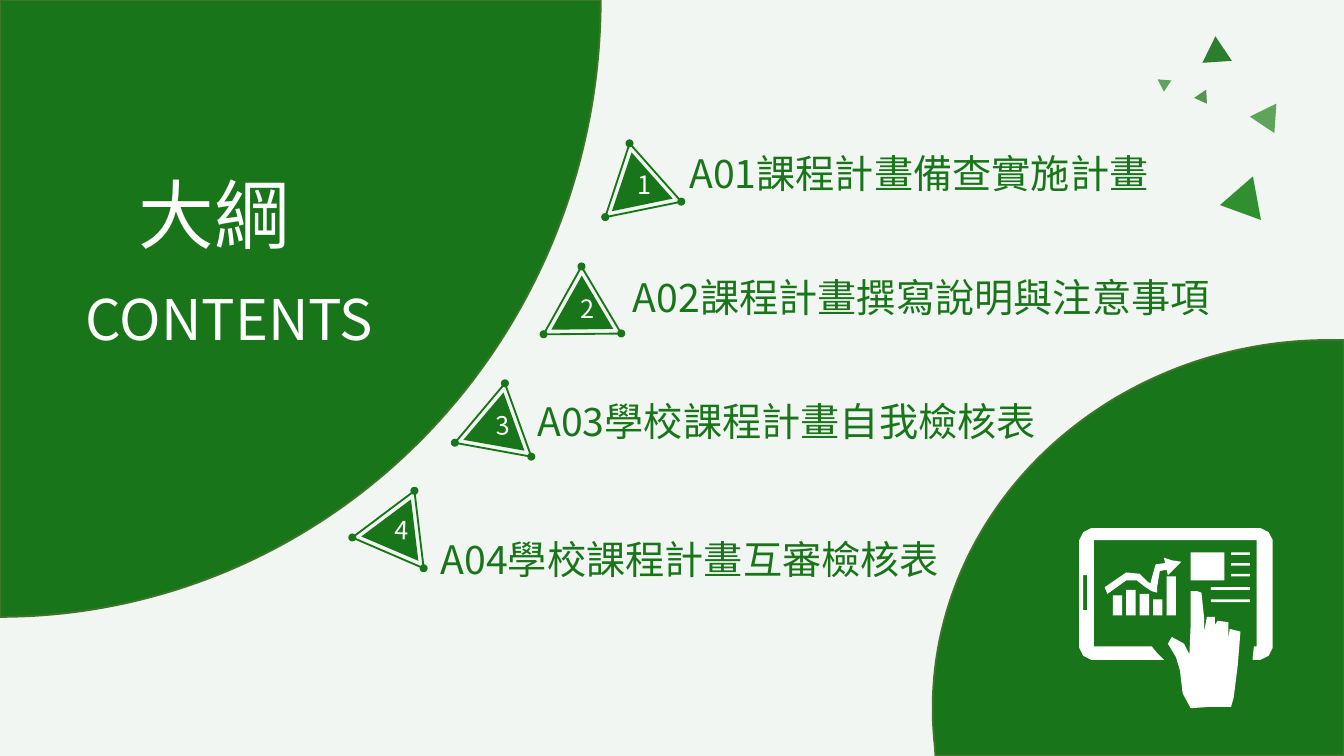
import math

import pptx
import pptx.dml.color
import pptx.enum.shapes
import pptx.enum.text
import pptx.util
from lxml import etree
from pptx.oxml.ns import qn

Inches = pptx.util.Inches
RGBColor = pptx.dml.color.RGBColor
MSO_SHAPE = pptx.enum.shapes.MSO_SHAPE
PP_ALIGN = pptx.enum.text.PP_ALIGN

GREEN = RGBColor(0x19, 0x75, 0x19)
EDGE_GREEN = RGBColor(0x3E, 0x75, 0x2A)
PALE_GREEN = RGBColor(0xF2, 0xF6, 0xF2)
WHITE = RGBColor(0xFF, 0xFF, 0xFF)
FONT = "Noto Sans CJK SC"


def style_shape(shape, fill=None, line=None):
    shape.shadow.inherit = False
    if fill is None:
        shape.fill.background()
    else:
        shape.fill.solid()
        shape.fill.fore_color.rgb = fill
    if line is None:
        shape.line.fill.background()
    else:
        shape.line.color.rgb = line
        shape.line.width = pptx.util.Pt(1)


def write_text(box, text, size, color, align, margin_left, wrap=True):
    frame = box.text_frame
    frame_format = {
        "word_wrap": wrap,
        "auto_size": pptx.enum.text.MSO_AUTO_SIZE.NONE,
        "vertical_anchor": pptx.enum.text.MSO_ANCHOR.MIDDLE,
        "margin_left": Inches(margin_left),
        "margin_top": 0, "margin_right": 0, "margin_bottom": 0,
    }
    for attribute, value in frame_format.items():
        setattr(frame, attribute, value)
    paragraph = frame.paragraphs[0]
    paragraph.alignment = align
    run = paragraph.add_run()
    run.text = text
    run.font.size = pptx.util.Pt(size)
    run.font.color.rgb = color
    run.font.name = FONT
    east_asian = etree.SubElement(run.font._element, qn("a:ea"))
    east_asian.set("typeface", FONT)


prs = pptx.Presentation()
prs.slide_width = Inches(10)
prs.slide_height = prs.slide_width * 9 // 16
slide = prs.slides.add_slide(prs.slide_layouts[5])
shapes = slide.shapes
slide.background.fill.solid()
slide.background.fill.fore_color.rgb = PALE_GREEN

# Scattered triangles: left, top, width, height, rotation, colour
confetti = [
    (9.33, 0.81, 0.22, 0.19, 153.9, "5EA45A"),
    (9.05, 1.36, 0.33, 0.28, 259.5, "309030"),
    (8.94, 0.27, 0.22, 0.19, 356.2, "2B7E2A"),
    (8.6, 0.57, 0.1, 0.09, 303.5, "5EA45A"),
    (8.9, 0.69, 0.11, 0.09, 145.8, "559551"),
]
for *place, rotation, color in confetti:
    triangle = shapes.add_shape(MSO_SHAPE.ISOSCELES_TRIANGLE, *map(Inches, place))
    triangle.rotation = rotation
    style_shape(triangle, RGBColor.from_string(color))

# Agenda: text, its left, top and width, then badge centre, rotation and digit tilt
agenda = [
    ("A01課程計畫備查實施計畫", 5.03, 1.06, 3.75, 4.69, 1.45, 228.4, 0),
    ("A02課程計畫撰寫說明與注意事項", 4.61, 1.98, 4.58, 4.26, 2.36, 239.3, 0),
    ("A03學校課程計畫自我檢核表", 3.9, 2.91, 4.03, 3.62, 3.21, 250.2, 356.4),
    ("A04學校課程計畫互審檢核表", 3.18, 3.93, 4.35, 2.87, 3.97, 263.2, 2.1),
]
RING_W, RING_H = 0.58, 0.5
CORE_W, CORE_H = 0.46, 0.4
DOT = 0.06
DIGIT_W, DIGIT_H = 0.19, 0.33
for number, (text, left, top, width, cx, cy, rotation, tilt) in enumerate(agenda, 1):
    item = shapes.add_textbox(Inches(left), Inches(top), Inches(width), Inches(0.45))
    write_text(item, text, 21, GREEN, PP_ALIGN.LEFT, 0.1)

    badge = shapes.add_group_shape().shapes
    cos, sin = math.cos(math.radians(rotation)), math.sin(math.radians(rotation))

    # The core shares the ring's centroid, a sixth of the height below its centre
    shift = (RING_H - CORE_H) / 6
    triangles = [
        (cx, cy, RING_W, RING_H, None, GREEN),
        (cx - shift * sin, cy + shift * cos, CORE_W, CORE_H, GREEN, None),
    ]
    for x, y, w, h, fill, line in triangles:
        triangle = badge.add_shape(MSO_SHAPE.ISOSCELES_TRIANGLE, Inches(x - w / 2),
                                   Inches(y - h / 2), Inches(w), Inches(h))
        triangle.rotation = rotation
        style_shape(triangle, fill, line)

    for dx, dy in [(RING_W / 2, RING_H / 2), (-RING_W / 2, RING_H / 2), (0, -RING_H / 2)]:
        x, y = cx + dx * cos - dy * sin, cy + dx * sin + dy * cos
        dot = badge.add_shape(MSO_SHAPE.OVAL, Inches(x - DOT / 2), Inches(y - DOT / 2),
                              Inches(DOT), Inches(DOT))
        style_shape(dot, GREEN)

    x, y = cx - RING_H / 6 * sin, cy + RING_H / 6 * cos - 0.02
    digit = badge.add_textbox(Inches(x - DIGIT_W / 2), Inches(y - DIGIT_H / 2),
                              Inches(DIGIT_W), Inches(DIGIT_H))
    digit.rotation = tilt
    write_text(digit, str(number), 13.5, WHITE, PP_ALIGN.CENTER, 0.08, wrap=False)

# Corner discs, clipped by the slide edges
title_disc = [(0, 0)] + [
    (4.47 * math.cos(math.radians(a)), 4.59 * math.sin(math.radians(a)))
    for a in range(0, 91)
]
icon_disc = [(10, 5.62)] + [
    (9.89 + 2.95 * math.cos(math.radians(a)), 5.27 + 2.74 * math.sin(math.radians(a)))
    for a in range(272, 172, -1)
]
icon_disc[1] = (10, 2.53)
icon_disc[-1] = (6.96, 5.62)

# Tablet with chart and pointing hand
tablet = [
    (8.12, 3.93), (9.38, 3.93), (9.44, 3.96), (9.47, 4.02), (9.47, 4.82), (9.44, 4.88),
    (9.38, 4.91), (9.32, 4.91), (9.33, 4.81), (9.35, 4.81), (9.35, 4.02), (8.14, 4.02),
    (8.14, 4.81), (8.57, 4.81), (8.61, 4.86), (8.66, 4.91), (8.12, 4.91), (8.06, 4.88),
    (8.03, 4.82), (8.03, 4.02), (8.06, 3.96),
]
trend_arrow = [
    (8.22, 4.37), (8.24, 4.42), (8.38, 4.32), (8.46, 4.32), (8.51, 4.36), (8.57, 4.4),
    (8.61, 4.41), (8.61, 4.37), (8.63, 4.25), (8.68, 4.24), (8.69, 4.28), (8.79, 4.18),
    (8.72, 4.17), (8.66, 4.15), (8.67, 4.19), (8.6, 4.2), (8.59, 4.23), (8.56, 4.34),
    (8.54, 4.33), (8.48, 4.27), (8.38, 4.26),
]
hand = [
    (8.96, 4.7), (8.96, 4.6), (8.94, 4.41), (8.91, 4.4), (8.86, 4.4), (8.86, 4.64),
    (8.85, 4.87), (8.81, 4.79), (8.72, 4.74), (8.69, 4.79), (8.75, 4.89), (8.78, 4.99),
    (8.8, 5.16), (8.86, 5.27), (9, 5.26), (9.16, 5.26), (9.18, 5.19), (9.21, 4.95),
    (9.23, 4.7), (9.15, 4.68), (9.14, 4.76), (9.14, 4.63), (9.06, 4.62), (9.04, 4.65),
    (9.04, 4.59), (8.98, 4.59),
]
# Left, top, right, bottom: button slot, picture, text lines, then chart bars
blocks = [(8.06, 4.28, 8.09, 4.54), (8.86, 4.11, 9.11, 4.32)]
blocks += [(9.16, y, 9.3, y + 0.02) for y in (4.11, 4.19, 4.27)]
blocks += [(9.01, y, 9.3, y + 0.02) for y in (4.37, 4.46)]
blocks += [(8.28 + 0.1 * i, y, 8.35 + 0.1 * i, 4.58)
           for i, y in enumerate((4.43, 4.39, 4.42, 4.46, 4.29))]
tablet_icon = [tablet, trend_arrow, hand]
tablet_icon += [[(l, t), (r, t), (r, b), (l, b)] for l, t, r, b in blocks]

for outlines, fill, line in [([title_disc], GREEN, EDGE_GREEN),
                             ([icon_disc], GREEN, EDGE_GREEN),
                             (tablet_icon, WHITE, None)]:
    builder = None
    for outline in outlines:
        first, *rest = [(Inches(x), Inches(y)) for x, y in outline]
        if builder is None:
            builder = shapes.build_freeform(*first)
        else:
            builder.move_to(*first)
        builder.add_line_segments(rest, close=True)
    style_shape(builder.convert_to_shape(), fill, line)

# Headings, in front of the disc
title = shapes.title
title.left, title.top, title.width, title.height = map(Inches, (0.93, 1.2, 1.56, 0.78))
write_text(title, "大綱", 40.5, WHITE, PP_ALIGN.JUSTIFY, 0.1)
shapes._spTree.append(title._element)
subtitle = shapes.add_textbox(Inches(0.54), Inches(2.06), Inches(2.53), Inches(0.61))
write_text(subtitle, "CONTENTS", 30, WHITE, PP_ALIGN.JUSTIFY, 0.1)

prs.save("out.pptx")
